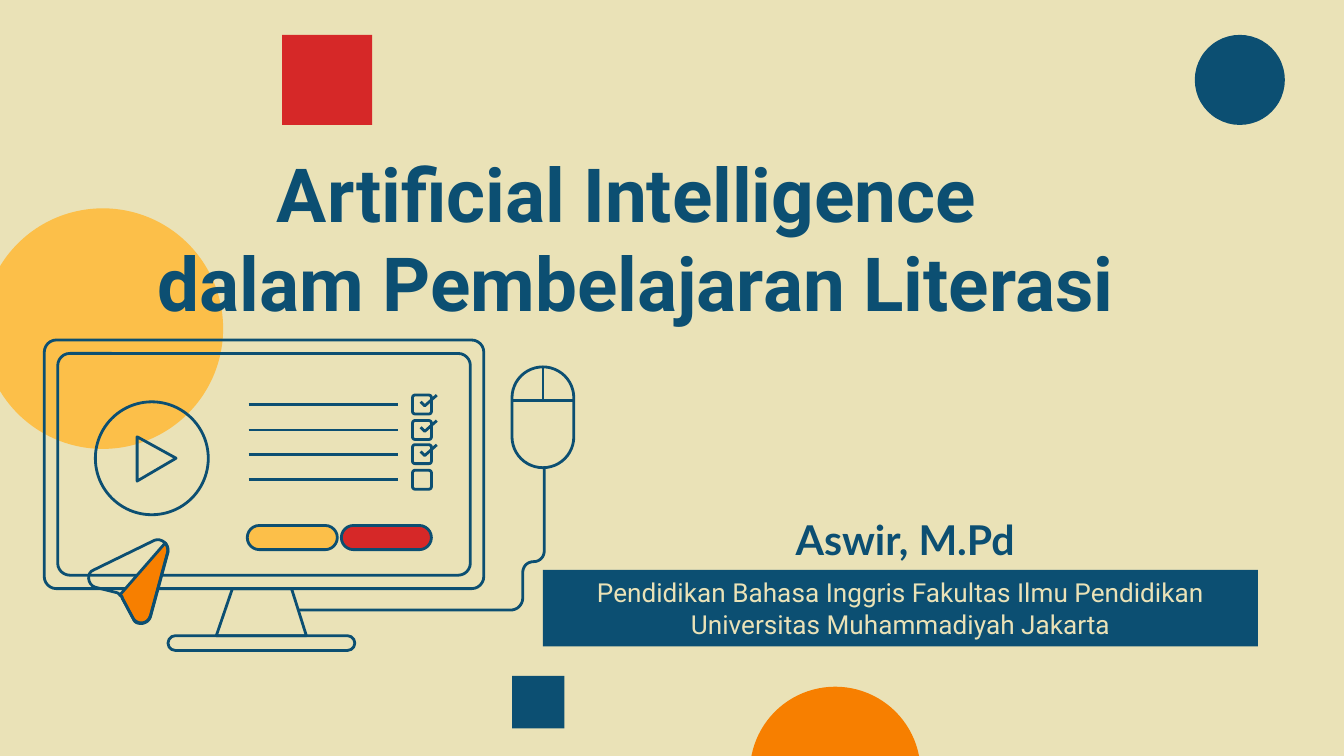
import pptx
import pptx.dml.color
import pptx.enum.shapes
import pptx.enum.text
import pptx.oxml.ns
import pptx.util
import lxml.etree

PX = 9144
HUES = {"sand": "EAE2B7", "navy": "0C4F72", "red": "D62828",
        "gold": "FCBF49", "flame": "F77F00"}
KIND = pptx.enum.shapes.MSO_SHAPE
ANCHOR = pptx.enum.text.MSO_ANCHOR


def hue(name):
    return pptx.dml.color.RGBColor.from_string(HUES[name])


def paint(shape, fill, edge):
    shape.shadow.inherit = False
    if fill:
        shape.fill.solid()
        shape.fill.fore_color.rgb = hue(fill)
    else:
        shape.fill.background()
    if edge:
        ink(shape)
    else:
        shape.line.fill.background()


def ink(shape):
    shape.line.color.rgb = hue("navy")
    shape.line.width = pptx.util.Pt(1.5)


def block(slide, box, kind, fill=None, edge=False, round_by=None):
    shape = slide.shapes.add_shape(kind, *[v * PX for v in box])
    if round_by is not None:
        shape.adjustments[0] = round_by
    paint(shape, fill, edge)
    return shape


def rule(slide, x1, y1, x2, y2):
    line = slide.shapes.add_connector(
        pptx.enum.shapes.MSO_CONNECTOR.STRAIGHT,
        x1 * PX, y1 * PX, x2 * PX, y2 * PX)
    ink(line)
    props = line._element.spPr
    lxml.etree.SubElement(props, pptx.oxml.ns.qn("a:effectLst"))


def bend(start, curve, steps=8):
    ends = [start, curve[:2], curve[2:4], curve[4:]]
    dots = []
    for i in range(1, steps + 1):
        t = i / steps
        mix = ((1 - t) ** 3, 3 * t * (1 - t) ** 2, 3 * t * t * (1 - t), t ** 3)
        dots.append(tuple(sum(m * e[k] for m, e in zip(mix, ends))
                          for k in (0, 1)))
    return dots


def trace(slide, box, path, fill=None, close=True):
    left, top = box[:2]
    dots = [path[0]]
    for part in path[1:]:
        dots += bend(dots[-1], part) if len(part) == 6 else [part]
    dots = [((left + x) * PX, (top + y) * PX) for x, y in dots]
    pen = slide.shapes.build_freeform(*dots[0], scale=1.0)
    pen.add_line_segments(dots[1:], close=close)
    paint(pen.convert_to_shape(), fill, True)


def write(shape, text, size, font, color, bold=False, anchor=ANCHOR.MIDDLE):
    frame = shape.text_frame
    frame.word_wrap = True
    frame.vertical_anchor = anchor
    frame.margin_left = frame.margin_right = 10 * PX
    frame.margin_top = frame.margin_bottom = 10 * PX
    frame.text = text
    para = frame.paragraphs[0]
    para.alignment = pptx.enum.text.PP_ALIGN.CENTER
    for run in para.runs:
        run.font.size = pptx.util.Pt(size)
        run.font.name = font
        run.font.bold = bold
        run.font.color.rgb = hue(color)


def label(slide, box, *args, **style):
    write(slide.shapes.add_textbox(*[v * PX for v in box]), *args, **style)


def decor(slide, box):
    left, top = box[:2]
    for x, y, size, kind, fill in (
            (558, 511, 127, KIND.OVAL, "flame"),
            (210, 26, 67, KIND.RECTANGLE, "red"),
            (381, 503, 39, KIND.RECTANGLE, "navy"),
            (889, 26, 67, KIND.OVAL, "navy"),
            (-13, 155, 179, KIND.OVAL, "gold")):
        block(slide, (left + x, top + y, size, size), kind, fill)


def screen(slide, box):
    left, top, wide, high = box
    trace(slide, (left + 128, top + high),
          [(67, 35), (56, 0), (12, 0), (0, 35)])
    for gap in (10, 0):
        tall = high - 2 * gap
        block(slide, (left + gap, top + gap, wide - 2 * gap, tall),
              KIND.ROUNDED_RECTANGLE, edge=True, round_by=9 / tall)
    block(slide, (left + 92, top + 220, 139, 11),
          KIND.ROUNDED_RECTANGLE, edge=True, round_by=0.5)


def checks(slide, box, count=4, done=3):
    left, top, wide, high = box
    size = 14
    gap = (high - size) / (count - 1)
    for i in range(count):
        y = round(top + i * gap)
        rule(slide, left, y + 7, left + 111, y + 7)
        block(slide, (left + wide - size, y, size, size),
              KIND.ROUNDED_RECTANGLE, edge=True, round_by=0.12)
        if i < done:
            trace(slide, (left + wide - 8, y),
                  [(0, 5), (3, 8), (12, 0)], close=False)


def play(slide, box):
    block(slide, box, KIND.OVAL, edge=True)
    trace(slide, (box[0] + 31, box[1] + 26), [(29, 16), (0, 0), (0, 33)])


def pills(slide, box):
    left, top, wide, high = box
    size = 67
    for x, fill in ((wide - size, "red"), (0, "gold")):
        block(slide, (left + x, top, size, high),
              KIND.ROUNDED_RECTANGLE, fill, True, 0.5)


def arrow(slide, box):
    trace(slide, box,
          [(59, 4), (60, 5, 61, 8, 61, 11), (48, 59),
           (47, 62, 44, 64, 41, 64), (38, 64, 36, 63, 35, 60),
           (27, 45), (27, 44, 26, 43, 25, 43)], "flame")
    trace(slide, box,
          [(6, 24), (51, 2), (56, 0, 62, 5, 61, 10), (48, 58),
           (46, 65, 38, 65, 35, 60), (27, 45),
           (27, 44, 26, 43, 25, 42), (24, 42, 24, 41, 23, 41),
           (7, 37), (1, 35, 0, 26, 6, 24)])


def mouse(slide, box):
    left, top, wide, high = box
    mid = left + wide // 2
    block(slide, box, KIND.ROUNDED_RECTANGLE, edge=True, round_by=0.5)
    rule(slide, left, top + 25, left + wide, top + 25)
    rule(slide, mid, top, mid, top + 25)
    trace(slide, (left - 159, top + high),
          [(183, 0), (183, 62), (183, 66, 180, 70, 175, 70),
           (170, 70, 167, 74, 167, 78), (167, 97),
           (167, 102, 163, 106, 158, 106), (0, 106)], close=False)


def heads(slide, box):
    left, top = box[:2]
    label(slide, (left, top, 820, 131),
          "Artificial Intelligence \vdalam Pembelajaran Literasi",
          40, "Roboto", "navy", bold=True, anchor=ANCHOR.BOTTOM)
    label(slide, (left + 362, top + 256, 497, 47),
          "Aswir, M.Pd", 22, "Lato", "navy", bold=True)


def banner(slide, box):
    bar = block(slide, box, KIND.RECTANGLE, "navy")
    write(bar, "Pendidikan Bahasa Inggris Fakultas Ilmu Pendidikan "
          "Universitas Muhammadiyah Jakarta", 14, "Roboto", "sand")


def main():
    deck = pptx.Presentation()
    deck.slide_width = 1000 * PX
    deck.slide_height = deck.slide_width * 9 // 16
    slide = deck.slides.add_slide(deck.slide_layouts[6])
    slide.background.fill.solid()
    slide.background.fill.fore_color.rgb = hue("sand")
    decor(slide, (0, 0, 1000, 562))
    heads(slide, (63, 122, 859, 303))
    screen(slide, (33, 253, 327, 185))
    checks(slide, (185, 294, 136, 70))
    arrow(slide, (64, 400, 62, 66))
    play(slide, (71, 299, 84, 84))
    pills(slide, (184, 391, 137, 18))
    mouse(slide, (381, 273, 46, 75))
    banner(slide, (404, 424, 532, 57))
    deck.save("out.pptx")


if __name__ == "__main__":
    main()
